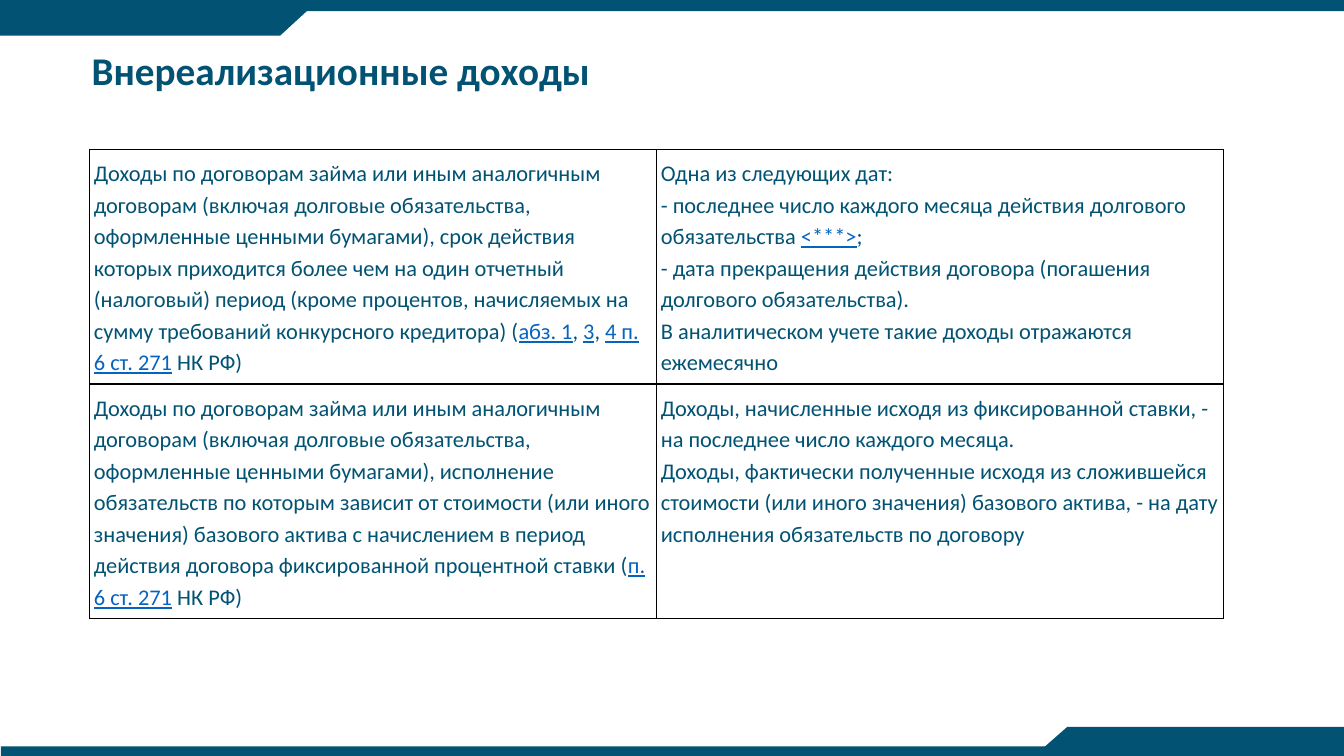
"""Build the slide on the recognition dates of non-operating income."""
from dataclasses import dataclass

from lxml.etree import SubElement
from pptx import Presentation
from pptx.dml.color import RGBColor
from pptx.enum.shapes import MSO_SHAPE as Preset
from pptx.enum.text import MSO_ANCHOR as Anchor, PP_ALIGN as Align
from pptx.oxml.ns import qn
from pptx.slide import Slide
from pptx.table import _Cell as Cell
from pptx.text.text import _Paragraph as Paragraph
from pptx.util import Pt


@dataclass(frozen=True)
class Theme:
    main: str = "025373"
    link: str = "0563C1"
    border: str = "000000"
    font: str = "Calibri"
    title_size: float = 28
    body_size: float = 16


@dataclass(frozen=True)
class Band:
    preset: Preset
    left: float
    top: float
    width: float
    height: float
    rotation: float = 0


@dataclass(frozen=True)
class Part:
    text: str
    is_link: bool = False


THEME = Theme()
SLIDE_WIDTH, SLIDE_HEIGHT = 960, 540
BANDS = (
    Band(Preset.RECTANGLE, 0, 0, SLIDE_WIDTH, 7.9),
    Band(Preset.RECTANGLE, 0.7, 533.2, 959.3, 6.8),
    Band(Preset.RECTANGLE, 0, 3.6, 200, 21.8),
    Band(Preset.FLOWCHART_MERGE, 176.4, 3.6, 47.5, 21.8),
    Band(Preset.RECTANGLE, 762.5, 519.1, 197.5, 20.9),
    Band(Preset.FLOWCHART_MERGE, 738.7, 519.1, 47.5, 20.9, 180),
)
LOANS = ("Доходы по договорам займа или иным аналогичным договорам "
         "(включая долговые обязательства, оформленные ценными бумагами), ")
INCOME_DATES = (
    (
        ((Part(LOANS + "срок действия которых приходится более чем на один отчетный "
               "(налоговый) период (кроме процентов, начисляемых на сумму требований "
               "конкурсного кредитора) ("),
          Part("абз. 1", True), Part(", "), Part("3", True), Part(", "),
          Part("4 п. 6 ст. 271", True), Part(" НК РФ)")),),
        ((Part("Одна из следующих дат:"),),
         (Part("- последнее число каждого месяца действия долгового обязательства "),
          Part("<***>", True), Part(";")),
         (Part("- дата прекращения действия договора (погашения долгового "
               "обязательства)."),),
         (Part("В аналитическом учете такие доходы отражаются ежемесячно"),)),
    ),
    (
        ((Part(LOANS + "исполнение обязательств по которым зависит от стоимости (или "
               "иного значения) базового актива с начислением в период действия "
               "договора фиксированной процентной ставки ("),
          Part("п. 6 ст. 271", True), Part(" НК РФ)")),),
        ((Part("Доходы, начисленные исходя из фиксированной ставки, - на последнее "
               "число каждого месяца."),),
         (Part("Доходы, фактически полученные исходя из сложившейся стоимости (или "
               "иного значения) базового актива, - на дату исполнения обязательств "
               "по договору"),)),
    ),
)


def draw_band(slide: Slide, band: Band) -> None:
    """Draw one piece of the edge decoration."""
    piece = slide.shapes.add_shape(band.preset, Pt(band.left), Pt(band.top),
                                   Pt(band.width), Pt(band.height))
    piece.rotation = band.rotation
    piece.shadow.inherit = False
    piece.fill.solid()
    piece.fill.fore_color.rgb = RGBColor.from_string(THEME.main)
    piece.line.fill.background()


def add_part(paragraph: Paragraph, part: Part, size: float, bold: bool = False) -> None:
    """Append one formatted run."""
    run = paragraph.add_run()
    run.text = part.text
    run.font.name = THEME.font
    run.font.size = Pt(size)
    run.font.bold = bold
    run.font.underline = part.is_link
    run.font.color.rgb = RGBColor.from_string(THEME.link if part.is_link else THEME.main)


def draw_title(slide: Slide, heading: str) -> None:
    """Place and fill the title placeholder."""
    title = slide.shapes.title
    title.left, title.top, title.width, title.height = Pt(58.3), Pt(0), Pt(828), Pt(104.4)
    title.text_frame.vertical_anchor = Anchor.MIDDLE
    title.text_frame.word_wrap = True
    paragraph = title.text_frame.paragraphs[0]
    paragraph.alignment = Align.LEFT
    paragraph.line_spacing = 0.9
    add_part(paragraph, Part(heading), THEME.title_size, bold=True)


def add_borders(cell: Cell) -> None:
    """Frame a cell with thin lines on all sides."""
    properties = cell._tc.get_or_add_tcPr()
    for index, side in enumerate(("a:lnL", "a:lnR", "a:lnT", "a:lnB")):
        line = SubElement(properties, qn(side), w=str(Pt(1)))
        SubElement(SubElement(line, qn("a:solidFill")), qn("a:srgbClr"), val=THEME.border)
        properties.insert(index, line)


def fill_cell(cell: Cell, content: tuple[tuple[Part, ...], ...]) -> None:
    """Write the paragraphs of one cell and format it."""
    cell.margin_left = cell.margin_right = Pt(3.1)
    cell.margin_top = cell.margin_bottom = Pt(5.1)
    cell.vertical_anchor = Anchor.TOP
    cell.fill.background()
    add_borders(cell)
    for index, parts in enumerate(content):
        frame = cell.text_frame
        paragraph = frame.add_paragraph() if index else frame.paragraphs[0]
        paragraph.line_spacing = 1.15
        for part in parts:
            add_part(paragraph, part, THEME.body_size)


def draw_income_table(slide: Slide) -> None:
    """Draw the table of income kinds and their dates."""
    income = slide.shapes.add_table(2, 2, Pt(64), Pt(106.7), Pt(810), Pt(334.8)).table
    income.first_row = income.horz_banding = False
    for row, contents in enumerate(INCOME_DATES):
        for column, content in enumerate(contents):
            fill_cell(income.cell(row, column), content)


def main() -> None:
    """Assemble and save the slide."""
    deck = Presentation()
    deck.slide_width, deck.slide_height = Pt(SLIDE_WIDTH), Pt(SLIDE_HEIGHT)
    slide = deck.slides.add_slide(deck.slide_layouts[5])
    for band in BANDS:
        draw_band(slide, band)
    draw_title(slide, "Внереализационные доходы")
    draw_income_table(slide)
    deck.save("out.pptx")


if __name__ == "__main__":
    main()
